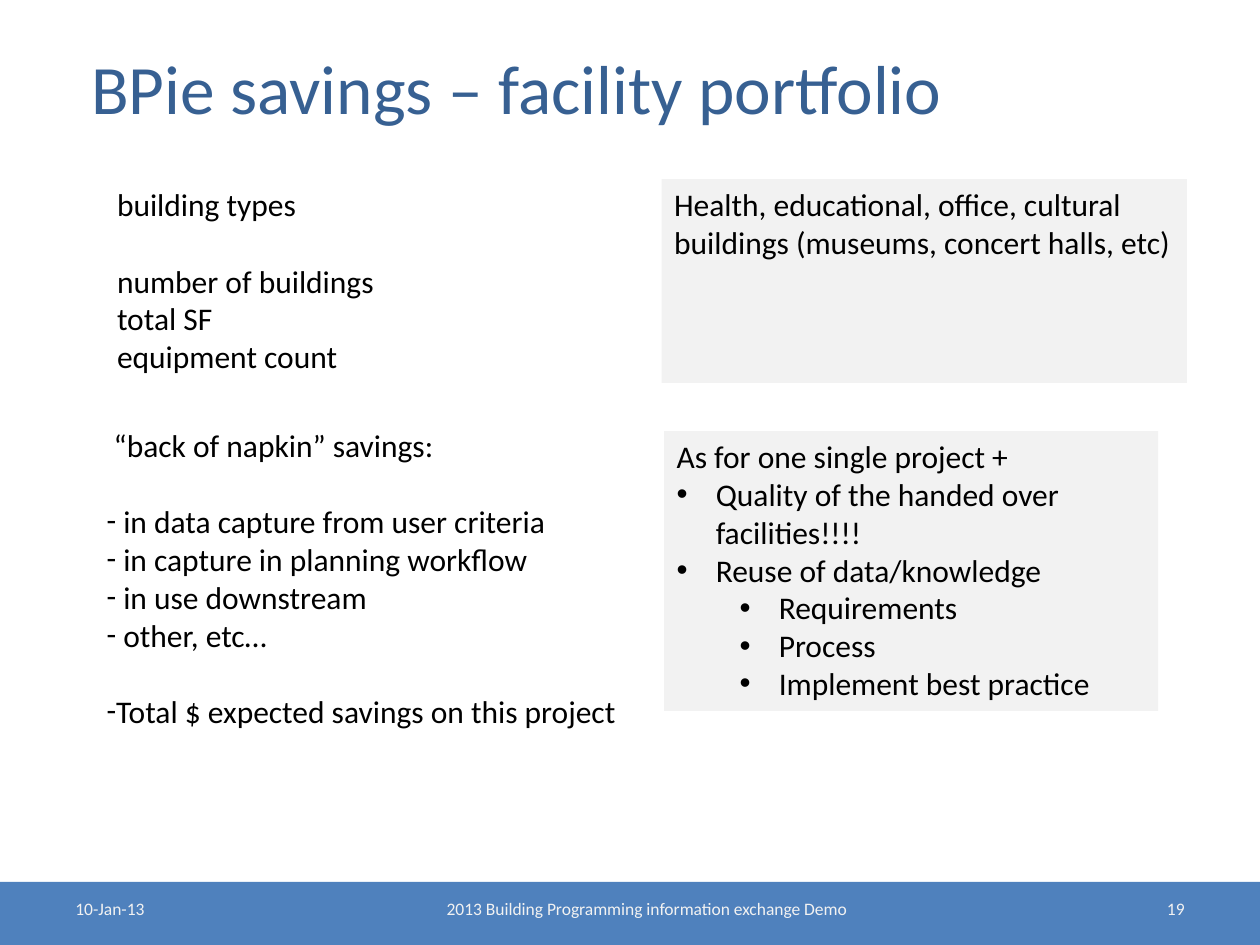
from lxml.etree import SubElement
from pptx import Presentation
from pptx.dml.color import RGBColor
from pptx.enum.shapes import MSO_SHAPE as Shape
from pptx.enum.text import MSO_ANCHOR as Anchor, PP_ALIGN as Align
from pptx.oxml.ns import qn
from pptx.util import Cm, Pt

# Content
TITLE = " BPie savings – facility portfolio"
FONT = "Calibri"
BLACK, NAVY, BLUE, GREY = "000000", "376092", "4F81BD", "F2F2F2"
LINE_GAP = 22  # one 18 pt line, in points

# Body boxes: left, top, width, height (cm), fill, paragraphs
# Paragraph: text, bullet, level, space before (pt)
BODY = [
    (2.11, 3.61, 9.73, 4.11, None, [
        ("building types", None, 0, 0),
        ("number of buildings", None, 0, LINE_GAP),
        ("total SF", None, 0, 0),
        ("equipment count", None, 0, 0),
    ]),
    (13.34, 3.61, 10.59, 4.11, GREY, [
        ("Health, educational, office, cultural buildings "
         "(museums, concert halls, etc)", None, 0, 0),
    ]),
    (1.9, 8.46, 10.8, 6.4, None, [
        (" “back of napkin” savings:", None, 0, 0),
        (" in data capture from user criteria", "-", 0, LINE_GAP),
        (" in capture in planning workflow", "-", 0, 0),
        (" in use downstream", "-", 0, 0),
        (" other, etc…", "-", 0, 0),
        ("Total $ expected savings on this project", "-", 0, LINE_GAP),
    ]),
    (13.39, 8.69, 9.96, 5.64, GREY, [
        ("As for one single project +", None, 0, 0),
        ("Quality of the handed over facilities!!!!", "•", 0, 0),
        ("Reuse of data/knowledge", "•", 0, 0),
        ("Requirements", "•", 1, 0),
        ("Process", "•", 1, 0),
        ("Implement best practice", "•", 1, 0),
    ]),
]

# Footer: left, width (cm), text, alignment
FOOTER = [
    (1.27, 5.92, "10-Jan-13", Align.LEFT),
    (7.42, 11.23, "2013 Building Programming information exchange Demo", Align.CENTER),
    (18.21, 5.92, "19", Align.RIGHT),
]


def color(hex_text):
    return RGBColor.from_string(hex_text)


def add_span(para, text, size, hex_text):
    span = para.add_run()
    span.text = text
    span.font.name = FONT
    span.font.size = Pt(size)
    span.font.color.rgb = color(hex_text)


def add_bullet(para, mark, level):
    para.level = level
    props = para._p.get_or_add_pPr()
    hang = Cm(0.79) if mark == "•" else 0
    props.set("marL", str(hang + level * Cm(1.27)))
    props.set("indent", str(-hang))
    SubElement(props, qn("a:buFont"), typeface="Arial" if mark == "•" else FONT)
    SubElement(props, qn("a:buChar"), char=mark)


def add_box(page, left, top, width, height, fill=None):
    area = [Cm(side) for side in (left, top, width, height)]
    if fill is None:
        box = page.shapes.add_textbox(*area)
    else:
        box = page.shapes.add_shape(Shape.RECTANGLE, *area)
        box.shadow.inherit = False
        box.fill.solid()
        box.fill.fore_color.rgb = color(fill)
        box.line.fill.background()
    box.text_frame.word_wrap = True
    return box


deck = Presentation()
deck.slide_width, deck.slide_height = Cm(25.4), Cm(19.05)
page = deck.slides.add_slide(deck.slide_layouts[5])

# Title
title = page.shapes.title
title.left, title.top, title.width, title.height = Cm(1.27), Cm(0.76), Cm(22.86), Cm(1.98)
title.text_frame.vertical_anchor = Anchor.MIDDLE
heading = title.text_frame.paragraphs[0]
heading.alignment = Align.LEFT
add_span(heading, TITLE, 39.6, NAVY)

# Body
for *area, fill, lines in BODY:
    frame = add_box(page, *area, fill).text_frame
    frame.vertical_anchor = Anchor.TOP
    frame.margin_right = 0
    for index, (text, mark, level, gap) in enumerate(lines):
        para = frame.add_paragraph() if index else frame.paragraphs[0]
        para.alignment = Align.LEFT
        para.space_before = Pt(gap)
        if mark:
            add_bullet(para, mark, level)
        add_span(para, text, 18, BLACK)

# Footer band
add_box(page, 0, 17.78, 25.4, 1.27, BLUE)
for left, width, text, alignment in FOOTER:
    frame = add_box(page, left, 17.98, width, 0.69).text_frame
    frame.vertical_anchor = Anchor.MIDDLE
    para = frame.paragraphs[0]
    para.alignment = alignment
    add_span(para, text, 10, GREY)

deck.save("out.pptx")
